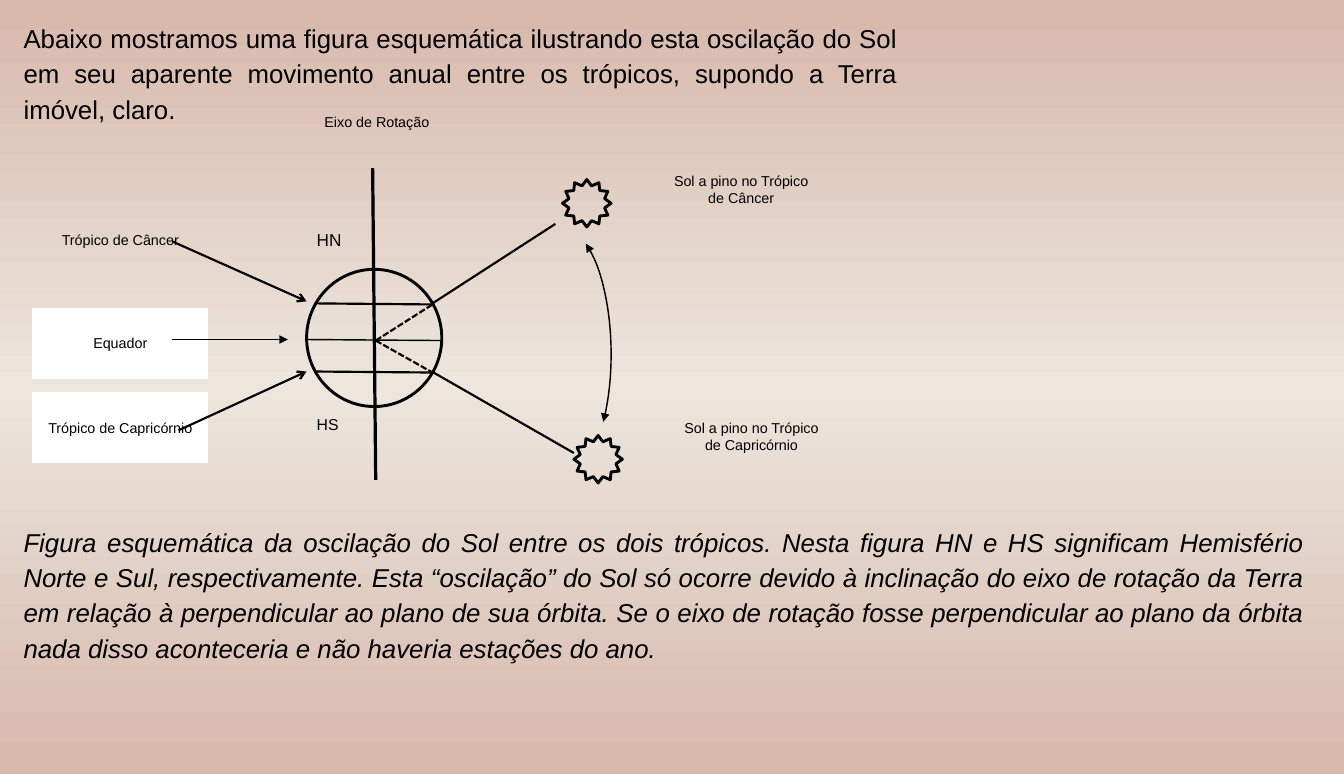
from copy import deepcopy

from lxml import etree
from pptx import Presentation
from pptx.dml.color import RGBColor
from pptx.enum.dml import MSO_LINE
from pptx.enum.shapes import MSO_CONNECTOR, MSO_SHAPE
from pptx.enum.text import MSO_ANCHOR, MSO_AUTO_SIZE, PP_ALIGN
from pptx.oxml.ns import qn
from pptx.util import Inches, Pt


def color(hex_value):
    return RGBColor.from_string(hex_value)


def write(shape, text, size, align=PP_ALIGN.LEFT, spacing=None, **font):
    """Fill a shape with wrapped text, one paragraph per line of text."""
    frame = shape.text_frame
    frame.word_wrap = True
    frame.text = text
    for paragraph in frame.paragraphs:
        paragraph.alignment = align
        paragraph.line_spacing = spacing
        for run in paragraph.runs:
            run.font.color.rgb = color("000000")
            for key, value in {"name": "Arial", "size": Pt(size), **font}.items():
                setattr(run.font, key, value)


prs = Presentation()
prs.slide_width, prs.slide_height = Inches(13.02), Inches(7.5)
slide = prs.slides.add_slide(prs.slide_layouts[6])
shapes = slide.shapes

# Background gradient
backdrop = slide.background.fill
backdrop.gradient()
backdrop.gradient_angle = 90
stop_list = slide.element.find(".//" + qn("a:gsLst"))
stop_list.append(deepcopy(stop_list[0]))
stops = zip(backdrop.gradient_stops, (0, 0.5, 1), ("D7B8AB", "ECE6DD", "D7B8AB"))
for stop, position, tint in stops:
    stop.position = position
    stop.color.rgb = color(tint)

# Introduction and caption
intro = (
    "Abaixo mostramos uma figura esquemática ilustrando esta oscilação do Sol "
    "em seu aparente movimento anual entre os trópicos, supondo a Terra imóvel, claro."
)
caption = (
    "Figura esquemática da oscilação do Sol entre os dois trópicos. Nesta figura HN e HS "
    "significam Hemisfério Norte e Sul, respectivamente. Esta “oscilação” do Sol só ocorre "
    "devido à inclinação do eixo de rotação da Terra em relação à perpendicular ao plano de "
    "sua órbita. Se o eixo de rotação fosse perpendicular ao plano da órbita nada disso "
    "aconteceria e não haveria estações do ano."
)
for text, top, width, height, italic in (
    (intro, 0.13, 8.66, 1.11, False),
    (caption, 5.01, 12.6, 1.48, True),
):
    passage = shapes.add_textbox(Inches(0.13), Inches(top), Inches(width), Inches(height))
    write(passage, text, 18, PP_ALIGN.JUSTIFY, 1.14, italic=italic)
    passage.text_frame.auto_size = MSO_AUTO_SIZE.SHAPE_TO_FIT_TEXT

# Labels of the diagram
for text, size, align, *box in (
    ("HN", 12, PP_ALIGN.LEFT, 2.97, 2.17, 0.74, 0.41),
    ("HS", 11, PP_ALIGN.LEFT, 2.97, 3.97, 0.58, 0.41),
    ("Eixo de Rotação", 10, PP_ALIGN.CENTER, 2.79, 1.05, 1.72, 0.4),
    ("Sol a pino no Trópico\nde Câncer", 10, PP_ALIGN.CENTER, 6.13, 1.62, 2.1, 0.72),
    ("Sol a pino no Trópico\nde Capricórnio", 10, PP_ALIGN.CENTER, 6.21, 4.01, 2.14, 0.68),
):
    write(shapes.add_textbox(*map(Inches, box)), text, size, align)

# Names of the parallels
for text, top, fill, tip_y, tip_x in (
    ("Trópico de Câncer", 1.98, None, 1.32, 1.59),
    ("Equador", 2.98, "FFFFFF", 0.53, 1.53),
    ("Trópico de Capricórnio", 3.8, "FFFFFF", -0.28, 1.56),
):
    parallel = shapes.add_shape(
        MSO_SHAPE.LINE_CALLOUT_1, Inches(0.31), Inches(top), Inches(1.71), Inches(0.69)
    )
    parallel.shadow.inherit = False
    for i, value in enumerate((0.49, 1.02, tip_y, tip_x)):
        parallel.adjustments[i] = value
    if fill:
        parallel.fill.solid()
        parallel.fill.fore_color.rgb = color(fill)
    else:
        parallel.fill.background()
    parallel.line.fill.background()
    write(parallel, text, 10, PP_ALIGN.CENTER)
    parallel.text_frame.vertical_anchor = MSO_ANCHOR.MIDDLE

# Earth, the two suns and the path between them; arc angles are in units of 0.6 per degree
for kind, adjustments, width, *box in (
    (MSO_SHAPE.OVAL, (), 2, 2.97, 2.61, 1.31, 1.33),
    (MSO_SHAPE.STAR_12_POINT, (0.38,), 2, 5.45, 1.74, 0.47, 0.46),
    (MSO_SHAPE.STAR_12_POINT, (0.38,), 2, 5.56, 4.22, 0.47, 0.46),
    (MSO_SHAPE.ARC, (283.2 * 0.6, 57.5 * 0.6), 1, 4.93, 2.19, 0.99, 2.48),
):
    body = shapes.add_shape(kind, *map(Inches, box))
    body.shadow.inherit = False
    for i, value in enumerate(adjustments):
        body.adjustments[i] = value
    body.fill.background()
    body.line.color.rgb = color("000000")
    body.line.width = Pt(width)
    if kind == MSO_SHAPE.ARC:
        outline = body.line.fill and body.element.spPr.find(qn("a:ln"))
        for end in ("a:headEnd", "a:tailEnd"):
            etree.SubElement(outline, qn(end), type="triangle")

# Axis, parallels, pointers and sun rays
for x1, y1, x2, y2, width, dash, arrow in (
    (3.61, 1.63, 3.64, 4.65, 2.25, None, None),
    (2.97, 3.29, 4.29, 3.3, 1, None, None),
    (3.05, 2.94, 4.19, 2.95, 1.5, None, None),
    (3.06, 3.6, 4.2, 3.61, 1.5, None, None),
    (1.67, 2.34, 2.97, 2.92, 1.5, None, "arrow"),
    (1.67, 3.29, 2.79, 3.29, 1, None, "triangle"),
    (1.73, 4.17, 2.97, 3.6, 1.5, None, "arrow"),
    (3.64, 3.3, 4.19, 2.95, 1.5, MSO_LINE.SQUARE_DOT, None),
    (4.19, 2.94, 5.38, 2.17, 1.5, None, None),
    (3.64, 3.3, 4.19, 3.61, 1.5, MSO_LINE.SQUARE_DOT, None),
    (4.2, 3.61, 5.56, 4.39, 1.5, None, None),
):
    stroke = shapes.add_connector(MSO_CONNECTOR.STRAIGHT, *map(Inches, (x1, y1, x2, y2)))
    stroke.line.color.rgb = color("000000")
    stroke.line.width = Pt(width)
    if dash:
        stroke.line.dash_style = dash
    properties = stroke.element.spPr
    if arrow:
        etree.SubElement(properties.find(qn("a:ln")), qn("a:tailEnd"), type=arrow)
    etree.SubElement(properties, qn("a:effectLst"))

prs.save("out.pptx")
